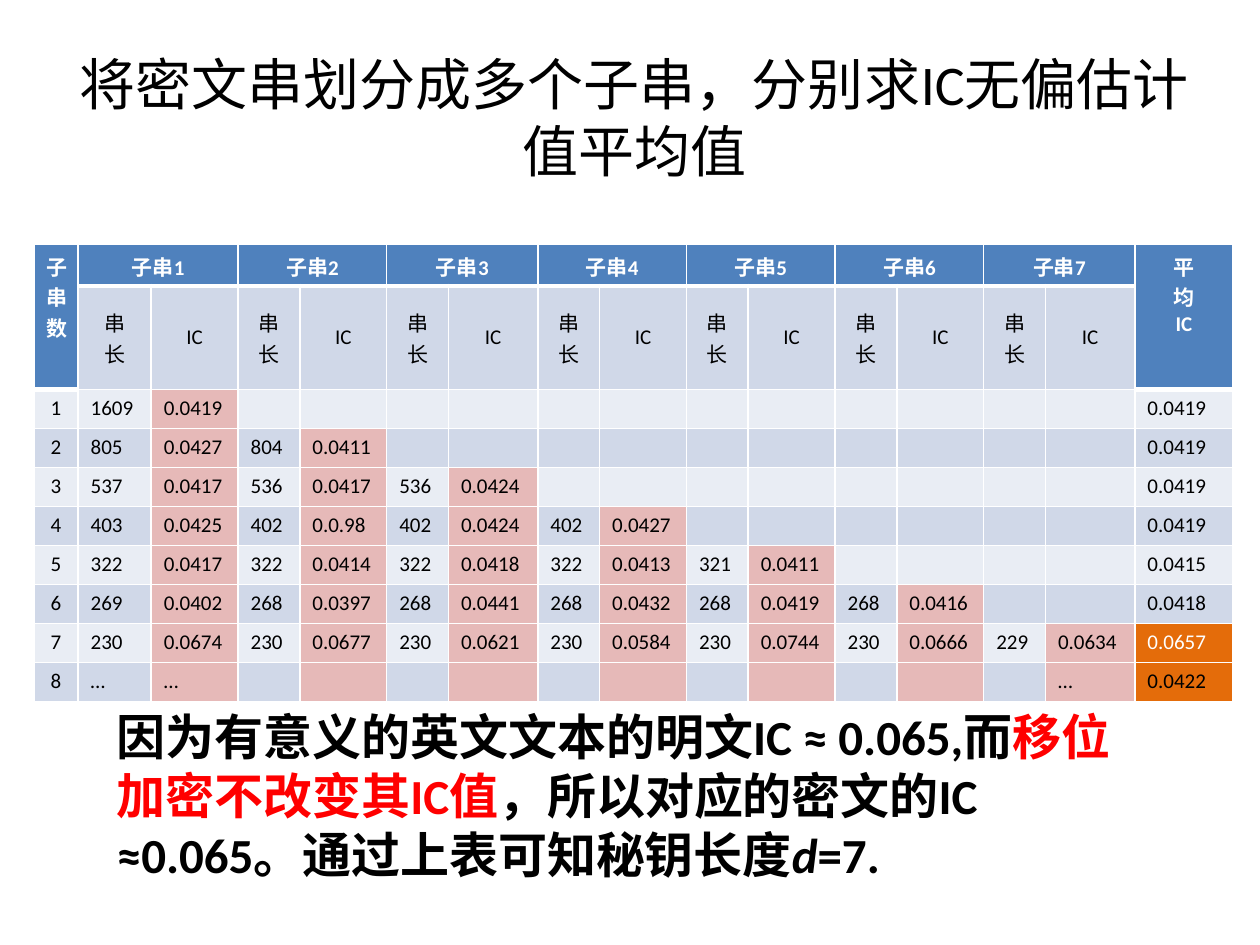
import pptx
import pptx.util
import pptx.dml.color
import pptx.enum.text
import pptx.oxml.ns
import lxml.etree

Inches, Pt = pptx.util.Inches, pptx.util.Pt
ALIGN, ANCHOR = pptx.enum.text.PP_ALIGN, pptx.enum.text.MSO_ANCHOR

# Content
TITLE = "将密文串划分成多个子串，分别求IC无偏估计值平均值"
LEFT_HEAD = ["子", "串", "数"]
RIGHT_HEAD = ["平", "均", "IC"]
SUB_HEADS = [["串", "长"], ["IC"]]
GROUPS = 7
# Each row: length and IC of every substring, then the mean IC
ROWS = [
    (["1609", "0.0419"], "0.0419"),
    (["805", "0.0427", "804", "0.0411"], "0.0419"),
    (["537", "0.0417", "536", "0.0417", "536", "0.0424"], "0.0419"),
    (["403", "0.0425", "402", "0.0.98", "402", "0.0424",
      "402", "0.0427"], "0.0419"),
    (["322", "0.0417", "322", "0.0414", "322", "0.0418",
      "322", "0.0413", "321", "0.0411"], "0.0415"),
    (["269", "0.0402", "268", "0.0397", "268", "0.0441",
      "268", "0.0432", "268", "0.0419", "268", "0.0416"], "0.0418"),
    (["230", "0.0674", "230", "0.0677", "230", "0.0621", "230", "0.0584",
      "230", "0.0744", "230", "0.0666", "229", "0.0634"], "0.0657"),
    (["…", "…"] + [""] * 11 + ["…"], "0.0422"),
]
NOTE = [
    ("因为有意义的英文文本的明文IC ≈ 0.065,而", "ink", False),
    ("移位加密不改变其IC值", "red", False),
    ("，所以对应的密文的IC ≈0.065。通过上表可知秘钥长度", "ink", False),
    ("d", "ink", True),
    ("=7.", "ink", False),
]

THEME = {
    "font": "Calibri", "title": 32, "note": 28, "cell": 12,
    "ink": "000000", "white": "FFFFFF", "red": "FF0000", "head": "4F81BD",
    "bands": ["D0D8E8", "E9EDF4"], "pink": "E6B9B8", "mark": "E46C0A",
}
COLS = [0.35, 0.58, 0.69] + [0.49, 0.69, 0.49, 0.71] + [0.49, 0.69] * 3 \
    + [0.49, 0.71, 0.78]
HEIGHTS = [0.33, 0.82] + [0.31] * len(ROWS)
LAST = len(COLS) - 1


def color(name):
    return pptx.dml.color.RGBColor.from_string(THEME.get(name, name))


def add_run(para, text, size, ink="ink", bold=False, slant=False):
    run = para.add_run()
    run.text = text
    font = run.font
    font.name, font.size = THEME["font"], Pt(THEME[size])
    font.bold, font.italic = bold, slant
    font.color.rgb = color(ink)


def add_box(slide, left, top, width, height):
    box = slide.shapes.add_textbox(*map(Inches, (left, top, width, height)))
    box.text_frame.word_wrap = True
    return box.text_frame


def set_edges(cell, top=1, bottom=1):
    props = cell._tc.get_or_add_tcPr()
    qn = pptx.oxml.ns.qn
    sides = [("a:lnL", 1), ("a:lnR", 1), ("a:lnT", top), ("a:lnB", bottom)]
    for spot, (tag, width) in enumerate(sides):
        line = lxml.etree.Element(qn(tag), w=str(Pt(width)))
        fill = lxml.etree.SubElement(line, qn("a:solidFill"))
        lxml.etree.SubElement(fill, qn("a:srgbClr"), val=THEME["white"])
        props.insert(spot, line)


def fill_cell(cell, lines, fill, ink="ink", bold=False, align=ALIGN.LEFT):
    cell.fill.solid()
    cell.fill.fore_color.rgb = color(fill)
    frame = cell.text_frame
    for num, text in enumerate(lines):
        para = frame.add_paragraph() if num else frame.paragraphs[0]
        para.alignment = align
        if text:
            add_run(para, text, "cell", ink, bold)
        else:
            # An empty cell still needs the small type size to keep its row low
            lxml.etree.SubElement(para._p, pptx.oxml.ns.qn("a:endParaRPr"),
                                  sz=str(THEME["cell"] * 100))


def add_heads(table):
    # Top row: merged titles
    heads = [(0, 1, 0, LEFT_HEAD, ALIGN.LEFT),
             (LAST, 1, LAST, RIGHT_HEAD, ALIGN.CENTER)]
    for num in range(GROUPS):
        col = 1 + 2 * num
        heads.append((col, 0, col + 1, [f"子串{num + 1}"], ALIGN.CENTER))
    for col, row, end, lines, align in heads:
        cell = table.cell(0, col)
        cell.merge(table.cell(row, end))
        fill_cell(cell, lines, "head", "white", True, align)
    # Second row: length and IC
    for col in range(1, LAST):
        cell = table.cell(1, col)
        fill_cell(cell, SUB_HEADS[(col - 1) % 2], THEME["bands"][0],
                  align=ALIGN.CENTER)
        cell.vertical_anchor = ANCHOR.MIDDLE


def add_rows(table):
    for num, (vals, mean) in enumerate(ROWS, 1):
        band = THEME["bands"][num % 2]
        vals = vals + [""] * (2 * GROUPS - len(vals))
        fill_cell(table.cell(num + 1, 0), [str(num)], band, align=ALIGN.CENTER)
        for spot, text in enumerate(vals):
            used = spot % 2 and spot // 2 < num
            fill_cell(table.cell(num + 1, spot + 1), [text],
                      "pink" if used else band)
        fill_cell(table.cell(num + 1, LAST), [mean],
                  "mark" if num >= 7 else band,
                  "white" if num == 7 else "ink")


def add_grid(slide):
    frame = slide.shapes.add_table(
        len(HEIGHTS), len(COLS), Inches(0.27), Inches(1.94),
        Inches(sum(COLS)), Inches(sum(HEIGHTS)))
    table = frame.table
    for col, width in zip(table.columns, COLS):
        col.width = Inches(width)
    for row, height in zip(table.rows, HEIGHTS):
        row.height = Inches(height)
    add_heads(table)
    add_rows(table)
    # White grid, thick below the header cells
    for row in range(len(HEIGHTS)):
        for col in range(len(COLS)):
            edge = 1 if col in (0, LAST) else 0
            set_edges(table.cell(row, col),
                      top=3 if row == edge + 1 else 1,
                      bottom=3 if row <= edge else 1)


def main():
    deck = pptx.Presentation()
    deck.slide_width, deck.slide_height = Inches(10), Inches(7.5)
    slide = deck.slides.add_slide(deck.slide_layouts[6])

    # Title
    frame = add_box(slide, 0.5, 0.3, 9.07, 1.25)
    frame.vertical_anchor = ANCHOR.MIDDLE
    para = frame.paragraphs[0]
    para.alignment = ALIGN.CENTER
    add_run(para, TITLE, "title")

    add_grid(slide)

    # Conclusion
    para = add_box(slide, 0.83, 5.56, 8.43, 1.51).paragraphs[0]
    for text, ink, slant in NOTE:
        add_run(para, text, "note", ink, True, slant)

    deck.save("out.pptx")


if __name__ == "__main__":
    main()
